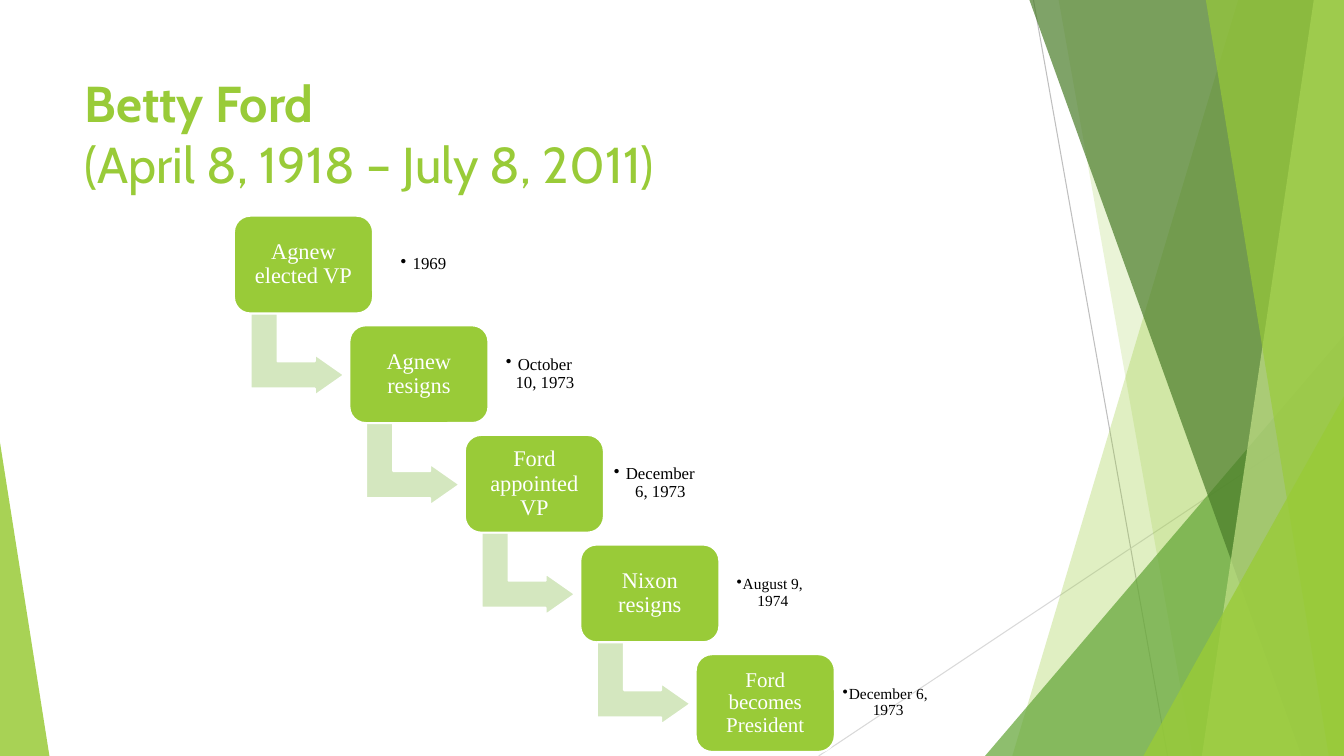
from dataclasses import dataclass
from lxml.etree import SubElement as Sub
from pptx import Presentation
from pptx.dml.color import RGBColor as RGB
from pptx.enum.shapes import MSO_CONNECTOR as Link, MSO_SHAPE as Form
from pptx.enum.text import MSO_ANCHOR as Anchor, PP_ALIGN as Align
from pptx.oxml.ns import qn
from pptx.util import Pt

CELL = 9144
COLS, ROWS = 1333, 750


@dataclass(frozen=True)
class Theme:
    """Colours, fonts and type sizes of the slide."""
    lime: str = "99CB38"
    leaf: str = "63A537"
    moss: str = "4A7C29"
    pale: str = "C2E088"
    mist: str = "D4E7BF"
    white: str = "FFFFFF"
    black: str = "000000"
    head: str = "Cabin"
    body: str = "Times New Roman"
    title: int = 36
    step: int = 16
    tight: int = 15
    date: int = 12
    small: int = 11


LOOK = Theme()

STEPS = [
    ("Agnew elected VP", "1969", LOOK.step, 7, LOOK.date),
    ("Agnew resigns", "October 10, 1973", LOOK.step, 7, LOOK.date),
    ("Ford appointed VP", "December 6, 1973", LOOK.step, 7, LOOK.date),
    ("Nixon resigns", "August 9, 1974", LOOK.step, 7, LOOK.small),
    ("Ford becomes President", "December 6, 1973", LOOK.tight, 6, LOOK.small),
]


def grid(*cells):
    """Turn grid cells into slide lengths."""
    return [round(cell * CELL) for cell in cells]


def put(thing, **vals):
    """Set each given value on a thing."""
    for name, val in vals.items():
        setattr(thing, name, val)


def paint(shape, tint, clear=100, edge=None):
    """Fill a shape, with a share of opacity and an edge colour."""
    shape.shadow.inherit = False
    shape.fill.solid()
    shape.fill.fore_color.rgb = RGB.from_string(tint)
    if clear < 100:
        node = shape.fill._xPr.find(".//" + qn("a:srgbClr"))
        Sub(node, qn("a:alpha"), val=str(clear * 1000))
    if edge:
        shape.line.color.rgb = RGB.from_string(edge)
        shape.line.width = Pt(1.5)
    else:
        shape.line.fill.background()


def frame(shape, pad, anchor):
    """Wrap a shape's text and set its margins."""
    text = shape.text_frame
    sides = [f"margin_{side}" for side in ("left", "top", "right", "bottom")]
    put(text, word_wrap=True, vertical_anchor=anchor,
        **dict(zip(sides, grid(*pad))))
    return text.paragraphs[0]


def write(para, words, size, face, tint, bold=False):
    """Add one run of formatted text."""
    run = para.add_run()
    run.text = words
    put(run.font, size=Pt(size), name=face, bold=bold)
    run.font.color.rgb = RGB.from_string(tint)


def ray(shapes, ends, tint):
    """Draw one thin line."""
    line = shapes.add_connector(Link.STRAIGHT, *grid(*ends))
    put(line.line, width=Pt(0.75))
    line.line.color.rgb = RGB.from_string(tint)
    Sub(line._element.spPr, qn("a:effectLst"))


def pane(shapes, top, base, tint, clear):
    """Draw a pane from a slanted side to the right edge."""
    form = shapes.build_freeform(top, 0, scale=CELL)
    form.add_line_segments([(COLS, 0), (COLS, ROWS), (base, ROWS)])
    paint(form.convert_to_shape(), tint, clear)


def wedge(shapes, left, top, wide, tip, tint, clear):
    """Draw a triangle that stands on the bottom edge."""
    form = shapes.add_shape(Form.ISOSCELES_TRIANGLE,
                            *grid(left, top, wide, ROWS - top))
    form.adjustments[0] = tip
    paint(form, tint, clear)


def backdrop(shapes):
    """Draw the panes, wedges and rays at the slide's sides."""
    ray(shapes, (1025, 0, 1158, ROWS), "BFBFBF")
    ray(shapes, (COLS, 403, 812, ROWS), "D9D9D9")
    pane(shapes, 1228, 1004, LOOK.lime, 30)
    pane(shapes, 1050, 1183, LOOK.lime, 20)
    wedge(shapes, 977, 333, 356, 1, LOOK.leaf, 72)
    pane(shapes, 1021, 1291, LOOK.moss, 70)
    pane(shapes, 1303, 1192, LOOK.pale, 70)
    pane(shapes, 1196, 1318, LOOK.lime, 65)
    wedge(shapes, 1134, 393, 199, 1, LOOK.lime, 80)
    wedge(shapes, 0, 439, 49, 0, LOOK.lime, 85)


def title(shapes, box):
    """Write the name and the years of life."""
    para = frame(shapes.add_textbox(*grid(*box)), (10, 5, 10, 5), Anchor.TOP)
    style = (LOOK.title, LOOK.head, LOOK.lime)
    write(para, "Betty Ford", *style, bold=True)
    para.add_line_break()
    write(para, "(April 8, 1918 – July 8, 2011)", *style)


def arrow(shapes, left, top):
    """Draw the bent arrow that leads to the next step."""
    form = shapes.add_shape(Form.BENT_UP_ARROW, *grid(left, top, 82, 93))
    form.rotation = 90
    for spot, val in enumerate((0.328, 0.25, 0.358)):
        form.adjustments[spot] = val
    paint(form, LOOK.mist, edge=LOOK.white)


def card(shapes, box, words, size, pad):
    """Draw one step with its event."""
    form = shapes.add_shape(Form.ROUNDED_RECTANGLE, *grid(*box))
    form.adjustments[0] = 0.167
    paint(form, LOOK.lime, edge=LOOK.white)
    para = frame(form, [pad] * 4, Anchor.MIDDLE)
    put(para, alignment=Align.CENTER, line_spacing=0.9)
    write(para, words, size, LOOK.body, LOOK.white)


def date(shapes, box, words, size):
    """Write one bulleted date beside its step."""
    pad, dent = (7, 12) if size == LOOK.date else (5, 6)
    para = frame(shapes.add_textbox(*grid(*box)), [pad] * 4, Anchor.MIDDLE)
    put(para, alignment=Align.CENTER, line_spacing=0.9, level=1)
    props = para._p.get_or_add_pPr()
    props.set("marL", str(dent * CELL))
    props.set("indent", str(-dent * CELL))
    Sub(props, qn("a:buChar"), char="•")
    write(para, words, size, LOOK.body, LOOK.black)


def stairs(shapes, box):
    """Place the steps down a diagonal of the box."""
    left, top, wide, high = box
    card_w, card_h, date_w, date_h = 138, 97, 100, 78
    last = len(STEPS) - 1
    run = (wide - card_w - date_w) / last
    drop = (high - card_h) / last
    for rank, (event, day, size, pad, small) in enumerate(STEPS):
        x, y = left + rank * run, top + rank * drop
        if rank < last:
            arrow(shapes, x + 22, y + 91)
        card(shapes, (x, y, card_w, card_h), event, size, pad)
        date(shapes, (x + card_w, y + 9, date_w, date_h), day, small)


def main():
    """Build the slide and save it."""
    deck = Presentation()
    wide, high = grid(COLS, ROWS)
    put(deck, slide_width=wide, slide_height=high)
    shapes = deck.slides.add_slide(deck.slide_layouts[6]).shapes
    backdrop(shapes)
    title(shapes, (74, 67, 940, 144))
    stairs(shapes, (232, 214, 696, 532))
    deck.save("out.pptx")


if __name__ == "__main__":
    main()
